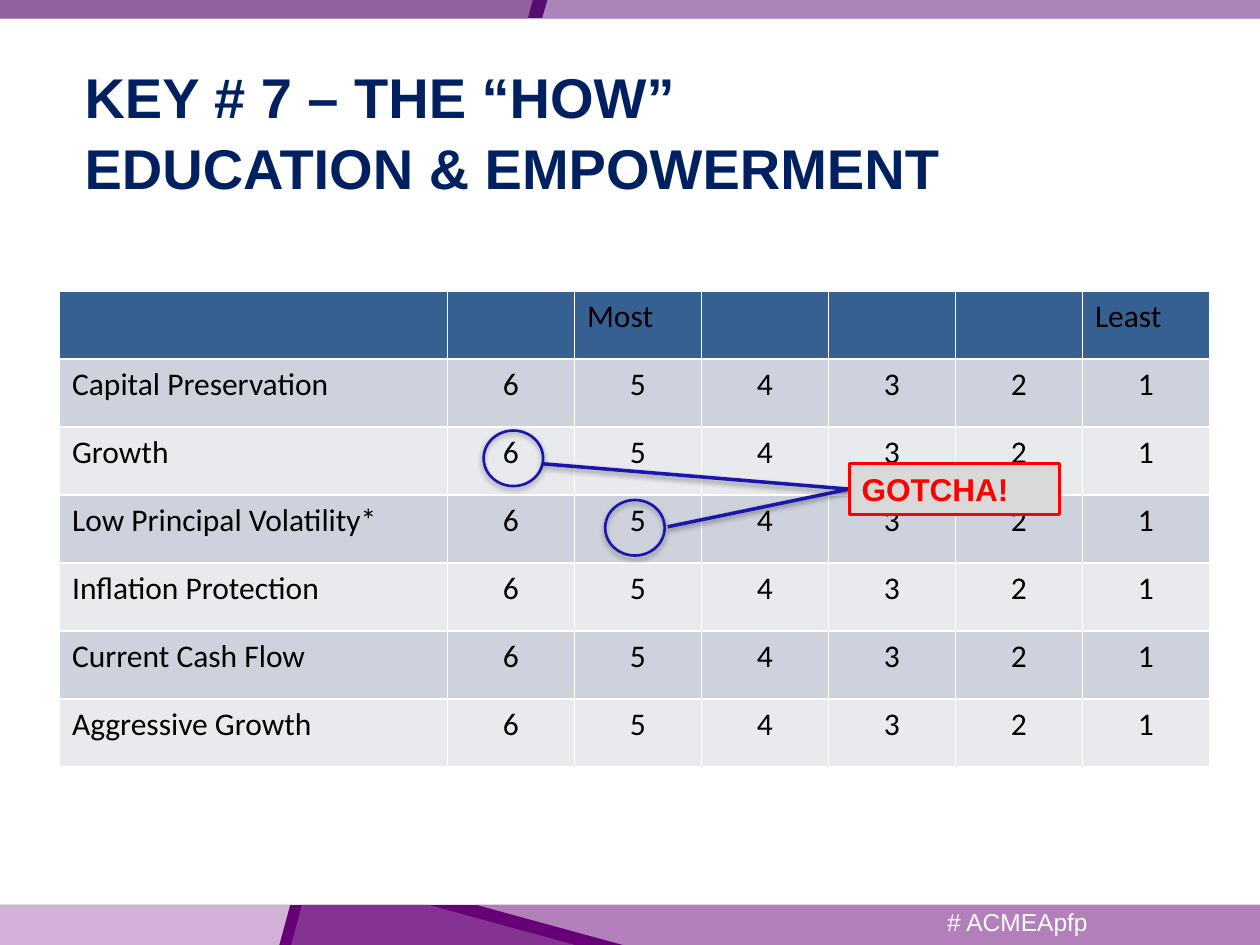
from lxml.etree import SubElement
from pptx import Presentation
from pptx.dml.color import RGBColor
from pptx.enum.shapes import MSO_CONNECTOR, MSO_SHAPE
from pptx.enum.text import MSO_ANCHOR, MSO_AUTO_SIZE, PP_ALIGN
from pptx.oxml.ns import qn
from pptx.util import Cm, Pt

THEME = {
    "font": "Arial", "table_font": "Calibri",
    "title_size": 32, "body_size": 18, "tag_size": 14,
    "title": "002060", "text": "000000", "white": "FFFFFF",
    "header": "376092", "rows": ("CED2DC", "E8EAEE"),
    "mark": "1A16AD", "alert": "FF0000", "alert_fill": "D9D9D9",
}

TITLE = "KEY # 7 – THE “HOW”\vEDUCATION & EMPOWERMENT"
HASHTAG = "# ACMEApfp"
CALLOUT = "GOTCHA!"
HEADER = ["", "", "Most", "", "", "", "Least"]
GOALS = ["Capital Preservation", "Growth", "Low Principal Volatility*",
         "Inflation Protection", "Current Cash Flow", "Aggressive Growth"]
SCORES = ["6", "5", "4", "3", "2", "1"]

# Lengths in cm
WIDTH, HEIGHT = 25.4, 19.05
# Each band: top, height, base colour, and panels as
# (colour, left at top, right at top, right at bottom, left at bottom)
BANDS = [
    (0, 0.37, "560C70", [
        ("9161A2", 0, 10.74, 10.64, 0),
        ("AA85B7", 11.04, WIDTH, WIDTH, 10.93)]),
    (18.24, 0.81, "670077", [
        ("D1B2D6", 0, 5.85, 5.63, 0),
        ("853392", 6.09, 8.63, 11.59, 5.87),
        ("B37FBB", 9.6, WIDTH, WIDTH, 12.56)]),
]
TABLE_LEFT, TABLE_TOP = 1.2, 5.87
GOAL_WIDTH, SCORE_WIDTH, ROW_HEIGHT = 7.82, 2.56, 1.37
CIRCLE_SIZE = (1.2, 1.12)
CIRCLES = [(9.75, 8.68), (12.2, 10.08)]
LINE_STARTS = [(10.95, 9.35), (13.46, 10.62)]
CALLOUT_BOX = (17.12, 9.35, 4.24, 1.02)


def rgb(code):
    return RGBColor.from_string(code)


def cms(*lengths):
    return [Cm(n) for n in lengths]


def paint(shape, fill=None, line=None, width=1):
    if fill:
        shape.fill.solid()
        shape.fill.fore_color.rgb = rgb(fill)
    else:
        shape.fill.background()
    if line:
        shape.line.color.rgb = rgb(line)
        shape.line.width = Pt(width)
    else:
        shape.line.fill.background()


def style_text(tf, size, color, font=THEME["font"], bold=False, align=PP_ALIGN.LEFT):
    for p in tf.paragraphs:
        p.alignment = align
        for r in p.runs:
            r.font.name, r.font.size, r.font.bold = font, Pt(size), bold
            r.font.color.rgb = rgb(color)


def add_drop_shadow(shape, opacity, distance):
    """Cast a soft black shadow straight down; opacity in percent, distance in points."""
    effects = SubElement(shape._element.spPr, qn("a:effectLst"))
    shadow = SubElement(effects, qn("a:outerShdw"), blurRad=str(Pt(3.1)),
                        dist=str(Pt(distance)), dir="5400000", rotWithShape="0")
    black = SubElement(shadow, qn("a:srgbClr"), val="000000")
    SubElement(black, qn("a:alpha"), val=str(opacity * 1000))


def add_band(s, top, height, base, panels):
    band = s.shapes.add_shape(MSO_SHAPE.RECTANGLE, *cms(0, top, WIDTH, height))
    band.shadow.inherit = False
    paint(band, base)
    bottom = top + height
    for color, top_left, top_right, bottom_right, bottom_left in panels:
        builder = s.shapes.build_freeform(*cms(top_left, top))
        builder.add_line_segments([cms(top_right, top), cms(bottom_right, bottom),
                                   cms(bottom_left, bottom)])
        panel = builder.convert_to_shape()
        panel.shadow.inherit = False
        paint(panel, color)


def add_text(s, box, text):
    sp = s.shapes.add_textbox(*cms(*box))
    sp.text_frame.word_wrap = True
    sp.text_frame.text = text
    return sp


def add_score_table(s):
    rows = [HEADER] + [[goal] + SCORES for goal in GOALS]
    widths = [GOAL_WIDTH] + [SCORE_WIDTH] * len(SCORES)
    frame = s.shapes.add_table(len(rows), len(widths), *cms(
        TABLE_LEFT, TABLE_TOP, sum(widths), ROW_HEIGHT * len(rows)))
    table = frame.table
    for column, width in zip(table.columns, widths):
        column.width = Cm(width)
    for i, values in enumerate(rows):
        table.rows[i].height = Cm(ROW_HEIGHT)
        for j, value in enumerate(values):
            cell = table.cell(i, j)
            cell.text = value
            cell.fill.solid()
            cell.fill.fore_color.rgb = rgb(THEME["rows"][(i - 1) % 2] if i else THEME["header"])
            style_text(cell.text_frame, THEME["body_size"], THEME["text"], THEME["table_font"],
                       align=PP_ALIGN.CENTER if i and j else PP_ALIGN.LEFT)


def add_marks(s):
    for corner in CIRCLES:
        circle = s.shapes.add_shape(MSO_SHAPE.OVAL, *cms(*corner, *CIRCLE_SIZE))
        paint(circle, line=THEME["mark"], width=1.5)
        add_drop_shadow(circle, 35, 1.8)
    left, top, _, height = CALLOUT_BOX
    for start in LINE_STARTS:
        line = s.shapes.add_connector(MSO_CONNECTOR.STRAIGHT,
                                      *cms(*start, left, top + height / 2))
        line.line.color.rgb = rgb(THEME["mark"])
        line.line.width = Pt(2)
        add_drop_shadow(line, 38, 1.6)


def add_title(s):
    title = s.shapes.title
    title.left, title.top, title.width, title.height = cms(1.45, 1.07, 21.62, 3)
    tf = title.text_frame
    tf.text = TITLE
    tf.word_wrap = True
    tf.auto_size = MSO_AUTO_SIZE.NONE
    tf.vertical_anchor = MSO_ANCHOR.TOP
    tf.paragraphs[0].line_spacing = 1.05
    style_text(tf, THEME["title_size"], THEME["title"], bold=True)


def main():
    prs = Presentation()
    prs.slide_width, prs.slide_height = cms(WIDTH, HEIGHT)
    s = prs.slides.add_slide(prs.slide_layouts[5])
    for band in BANDS:
        add_band(s, *band)
    tag = add_text(s, (16.26, 18.08, 5.92, 1.02), HASHTAG)
    tag.text_frame.vertical_anchor = MSO_ANCHOR.MIDDLE
    style_text(tag.text_frame, THEME["tag_size"], THEME["white"], align=PP_ALIGN.RIGHT)
    add_title(s)
    add_score_table(s)
    add_marks(s)
    callout = add_text(s, CALLOUT_BOX, CALLOUT)
    paint(callout, THEME["alert_fill"], THEME["alert"], 1.75)
    style_text(callout.text_frame, THEME["body_size"], THEME["alert"], bold=True)
    prs.save("out.pptx")


if __name__ == "__main__":
    main()
